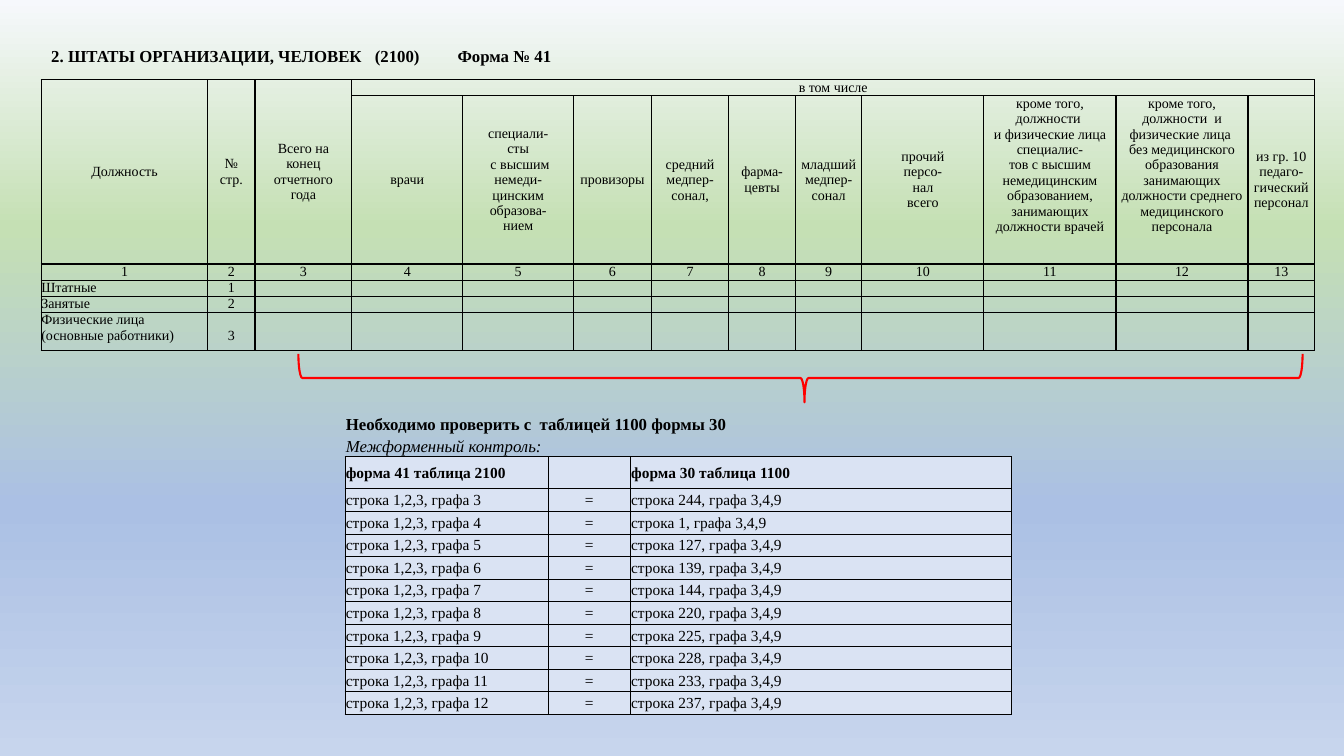
from dataclasses import dataclass

from lxml import etree
from pptx import Presentation
from pptx.dml.color import RGBColor
from pptx.enum.shapes import MSO_SHAPE
from pptx.enum.text import MSO_ANCHOR, PP_ALIGN
from pptx.oxml.ns import qn
from pptx.util import Inches, Pt

LEFT, CENTER = PP_ALIGN.LEFT, PP_ALIGN.CENTER
TOP, MIDDLE, BOTTOM = MSO_ANCHOR.TOP, MSO_ANCHOR.MIDDLE, MSO_ANCHOR.BOTTOM
LEFT_BRACE = MSO_SHAPE.LEFT_BRACE

BLACK = RGBColor(0x00, 0x00, 0x00)
RED = RGBColor(0xFF, 0x00, 0x00)
PALE_BLUE = RGBColor(0xDA, 0xE3, 0xF3)
BACKDROP = (
    (0, RGBColor(0xF6, 0xF8, 0xFC)),
    (30, RGBColor(0xC5, 0xE0, 0xB4)),
    (67, RGBColor(0xAB, 0xC0, 0xE4)),
    (100, RGBColor(0xC7, 0xD5, 0xED)),
)
FONT = "Times New Roman"
ALL_SIDES = "LRTB"


@dataclass(frozen=True)
class Style:
    size: float
    align: PP_ALIGN = LEFT
    anchor: MSO_ANCHOR = MIDDLE
    bold: bool = False
    italic: bool = False
    margin: float = 0
    bottom: float = 0
    fill: RGBColor | None = None
    border: float = 1
    sides: str = ALL_SIDES


STAFF = Style(10, CENTER)
STAFF_TOP = Style(10, CENTER, TOP)
STAFF_ROW = Style(10, LEFT, TOP)
LAST_ROW_NUMBER = Style(10, CENTER, BOTTOM, bottom=0.07)
CHECK_TITLE = Style(12, anchor=BOTTOM, bold=True, margin=0.01, sides="")
CHECK_NOTE = Style(12, anchor=BOTTOM, italic=True, margin=0.01, border=0.5, sides="B")
CHECK_HEAD = Style(11, bold=True, margin=0.01, fill=PALE_BLUE, border=0.5)
CHECK = Style(11, margin=0.01, fill=PALE_BLUE, border=0.5)
CHECK_SIGN = Style(11, CENTER, margin=0.01, fill=PALE_BLUE, border=0.5)

STAFF_COLUMNS = (1.65, 0.47, 0.96, 1.1, 1.1, 0.77, 0.77, 0.66, 0.66, 1.21, 1.31, 1.31, 0.66)
STAFF_HEIGHTS = (0.16, 1.67, 0.16, 0.16, 0.16, 0.38)
SPANNING_HEADS = ("Должность", "№\nстр.", "Всего на\nконец\nотчетного\nгода")
STAFF_HEADS = (
    "врачи",
    "специали-\nсты\v с высшим немеди-\nцинским образова-\nнием",
    "провизоры",
    "средний\nмедпер-\nсонал,",
    "фарма-\nцевты",
    "младший\nмедпер-\nсонал",
    "прочий\nперсо-\nнал\nвсего",
    "кроме того, должности \vи физические лица специалис-\n"
    "тов с высшим немедицинским образованием, занимающих должности врачей",
    "кроме того, должности  и физические лица \n"
    "без медицинского образования занимающих должности среднего медицинского персонала",
    "из гр. 10\nпедаго-\nгический персонал",
)
STAFF_ROWS = ("Штатные", "Занятые", "Физические лица\n(основные работники)")

CHECK_COLUMNS = (2.02, 0.81, 3.78)
CHECK_HEAD_HEIGHTS = (0.23, 0.22, 0.32)
CHECK_HEIGHT = 3.01
FORM_30_LINES = (244, 1, 127, 139, 144, 220, 225, 228, 233, 237)


def paint_background(slide) -> None:
    fill = slide.background.fill
    fill.gradient()
    fill.gradient_angle = 270
    stops = slide.background._cSld.find(".//" + qn("a:gsLst"))
    stops.clear()
    for position, color in BACKDROP:
        stop = etree.SubElement(stops, qn("a:gs"), pos=str(position * 1000))
        etree.SubElement(stop, qn("a:srgbClr"), val=str(color))


def style_paragraph(paragraph, style: Style) -> None:
    paragraph.alignment = style.align
    font = paragraph.font
    font.name, font.size = FONT, Pt(style.size)
    font.bold, font.italic = style.bold, style.italic
    font.color.rgb = BLACK


def draw_borders(cell, style: Style) -> None:
    properties = cell._tc.get_or_add_tcPr()
    for side in ALL_SIDES:
        line = etree.SubElement(properties, qn(f"a:ln{side}"), w=str(Pt(style.border)))
        if side in style.sides:
            solid = etree.SubElement(line, qn("a:solidFill"))
            etree.SubElement(solid, qn("a:srgbClr"), val=str(BLACK))
        else:
            etree.SubElement(line, qn("a:noFill"))


def fill_cell(cell, text: str, style: Style) -> None:
    draw_borders(cell, style)
    if style.fill is None:
        cell.fill.background()
    else:
        cell.fill.solid()
        cell.fill.fore_color.rgb = style.fill
    cell.margin_left = cell.margin_right = cell.margin_top = Inches(style.margin)
    cell.margin_bottom = Inches(style.bottom)
    cell.vertical_anchor = style.anchor
    cell.text = text
    for paragraph in cell.text_frame.paragraphs:
        style_paragraph(paragraph, style)
        if not text:
            etree.SubElement(paragraph._p, qn("a:endParaRPr"), sz=str(style.size * 100))


def add_grid(slide, left: float, top: float, widths: tuple, heights: tuple):
    table = slide.shapes.add_table(
        len(heights), len(widths), Inches(left), Inches(top),
        Inches(sum(widths)), Inches(sum(heights)),
    ).table
    table.first_row = table.horz_banding = False
    for column, width in zip(table.columns, widths):
        column.width = Inches(width)
    for row, height in zip(table.rows, heights):
        row.height = Inches(height)
    return table


def fill_rows(table, rows: list) -> None:
    for row_index, row in enumerate(rows):
        for column_index, (text, style) in enumerate(row):
            fill_cell(table.cell(row_index, column_index), text, style)


def add_title(slide) -> None:
    frame = slide.shapes.add_textbox(Inches(0.41), Inches(0.4), Inches(10.51), Inches(0.3)).text_frame
    frame.word_wrap = True
    frame.vertical_anchor = MIDDLE
    title = frame.paragraphs[0]
    title.text = "2. ШТАТЫ ОРГАНИЗАЦИИ, ЧЕЛОВЕК\t(2100)\tФорма № 41"
    style_paragraph(title, Style(12, bold=True))
    stops = etree.Element(qn("a:tabLst"))
    for position in (3.21, 4.03):
        etree.SubElement(stops, qn("a:tab"), pos=str(Inches(position)), algn="l")
    title._p.get_or_add_pPr().insert(0, stops)


def add_staff_table(slide) -> None:
    table = add_grid(slide, 0.41, 0.79, STAFF_COLUMNS, STAFF_HEIGHTS)
    count = len(STAFF_COLUMNS)
    spanned = len(SPANNING_HEADS)
    rows = [
        [(text, STAFF) for text in SPANNING_HEADS]
        + [("в том числе", STAFF_TOP)] + [("", STAFF)] * (count - spanned - 1),
        [("", STAFF)] * spanned
        + [(text, STAFF_TOP if text.startswith("кроме") else STAFF) for text in STAFF_HEADS],
        [(str(number), STAFF) for number in range(1, count + 1)],
    ]
    for number, name in enumerate(STAFF_ROWS, 1):
        number_style = LAST_ROW_NUMBER if number == len(STAFF_ROWS) else STAFF_TOP
        rows.append([(name, STAFF_ROW), (str(number), number_style)] + [("", STAFF)] * (count - 2))
    fill_rows(table, rows)
    for column in range(spanned):
        table.cell(0, column).merge(table.cell(1, column))
    table.cell(0, spanned).merge(table.cell(0, count - 1))


def add_brace(slide) -> None:
    brace = slide.shapes.add_shape(LEFT_BRACE, Inches(7.7), Inches(-1.23), Inches(0.48), Inches(9.96))
    brace.rotation = 270
    brace.adjustments[0], brace.adjustments[1] = 0.083, 0.504
    brace.shadow.inherit = False
    brace.fill.background()
    brace.line.color.rgb = RED
    brace.line.width = Pt(1.5)


def add_check_table(slide) -> None:
    line_count = len(FORM_30_LINES)
    line_height = (CHECK_HEIGHT - sum(CHECK_HEAD_HEIGHTS)) / line_count
    table = add_grid(slide, 3.42, 4.08, CHECK_COLUMNS, CHECK_HEAD_HEIGHTS + (line_height,) * line_count)
    rows = [
        [("Необходимо проверить с  таблицей 1100 формы 30", CHECK_TITLE)] + [("", CHECK_TITLE)] * 2,
        [("Межформенный контроль:", CHECK_NOTE)] + [("", CHECK_NOTE)] * 2,
        [("форма 41 таблица 2100", CHECK_HEAD), ("", CHECK_HEAD), ("форма 30 таблица 1100", CHECK_HEAD)],
    ]
    for graph, line in enumerate(FORM_30_LINES, 3):
        rows.append([
            (f"строка 1,2,3, графа {graph}", CHECK),
            ("=", CHECK_SIGN),
            (f"строка {line}, графа 3,4,9", CHECK),
        ])
    fill_rows(table, rows)
    table.cell(0, 0).merge(table.cell(0, 2))
    table.cell(1, 0).merge(table.cell(1, 1))


def main() -> None:
    presentation = Presentation()
    presentation.slide_width, presentation.slide_height = Inches(13.33), Inches(7.5)
    slide = presentation.slides.add_slide(presentation.slide_layouts[6])
    paint_background(slide)
    add_staff_table(slide)
    add_title(slide)
    add_brace(slide)
    add_check_table(slide)
    presentation.save("out.pptx")


if __name__ == "__main__":
    main()
